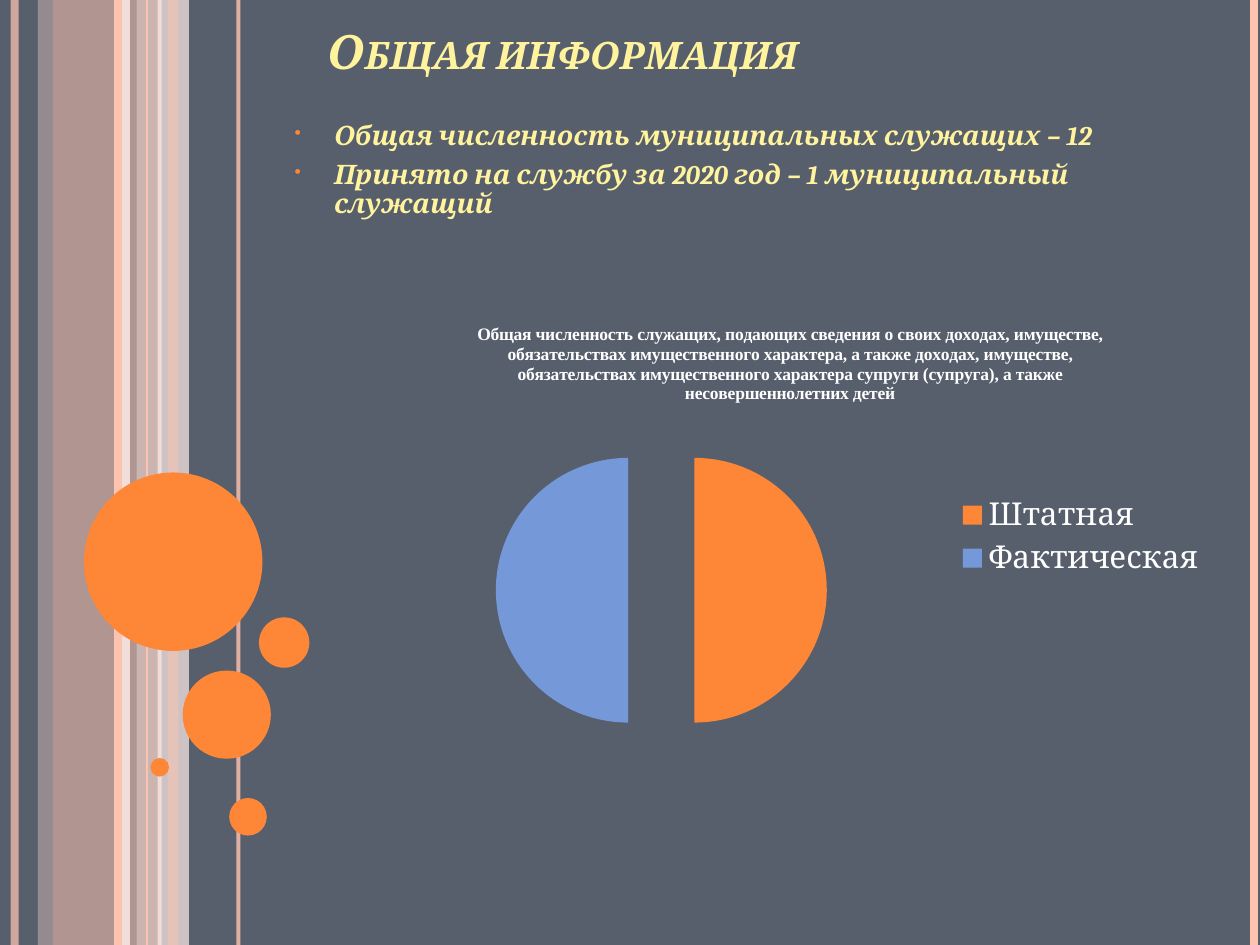
from lxml.etree import SubElement
from pptx import Presentation
from pptx.chart.data import CategoryChartData
from pptx.dml.color import RGBColor
from pptx.enum.chart import XL_CHART_TYPE, XL_LEGEND_POSITION
from pptx.enum.shapes import MSO_CONNECTOR, MSO_SHAPE
from pptx.enum.text import MSO_ANCHOR
from pptx.oxml.ns import qn
from pptx.util import Pt

TITLE = "Общая информация"
FACTS = [
    "Общая численность муниципальных служащих – 12",
    "Принято на службу за 2020 год – 1 муниципальный служащий",
]
CHART_TITLE = (
    "Общая численность служащих, подающих сведения о своих доходах, имуществе, "
    "обязательствах имущественного характера, а также доходах, имуществе, "
    "обязательствах имущественного характера супруги (супруга), а также "
    "несовершеннолетних детей"
)
STAFF = {"Штатная": 50, "Фактическая": 50}

THEME = {
    "background": "575F6D", "accent": "FE8637", "second": "7598D9",
    "peach": "FEC3AE", "light": "FFD9CE", "pale": "FFEDE8",
    "heading": "FFF39D", "chart_text": "FFFFFF",
    "font": "Cambria", "chart_title_font": "Times New Roman",
    "title_size": 27, "body_size": 15.3, "legend_size": 18, "chart_title_size": 10,
}
SLIDE_WIDTH, SLIDE_HEIGHT = 720, 540
BANDS = [
    (30, 48, "peach", 54), (21.6, 8.4, "light", 36), (78, 14.4, "light", 70),
    (90, 18, "pale", 71), (96, 6, "peach", 51),
]
STRIPES = [
    (8.4, 4.5, "peach", 73), (72, 4.5, "pale", 83), (67.2, 4.5, "peach", 100),
    (136.2, 2.25, "peach", 82), (84, 0.75, "peach", 100), (716.4, 4.5, "peach", 100),
]
CIRCLES = [
    (48, 270, 102), (104.4, 383.2, 50.4), (86, 433.2, 10.6),
    (131, 456, 21.5), (148, 352.8, 28.8),
]
TITLE_FRAME = (180, 20.9, 486, 28)
BODY_FRAME = (161.3, 66.2, 486, 57)
CHART_FRAME = (206.6, 173.5, 489.6, 266.4)
PLOT = {"x": 0.02, "y": 0.26, "w": 0.66, "h": 0.71}
EXPLOSION = 25
INDENT = 22.5


def points(values):
    return [Pt(value) for value in values]


def color(name):
    return RGBColor.from_string(THEME[name])


def apply(target, values):
    for name, value in values.items():
        setattr(target, name, value)


def paint(fill, name, opacity=100):
    fill.solid()
    fill.fore_color.rgb = color(name)
    if opacity < 100:
        srgb = fill._xPr.find(".//" + qn("a:srgbClr"))
        SubElement(srgb, qn("a:alpha"), val=str(opacity * 1000))


def add_filled(page, kind, frame, name, opacity=100):
    shape = page.shapes.add_shape(kind, *points(frame))
    shape.shadow.inherit = False
    paint(shape.fill, name, opacity)
    shape.line.fill.background()


def add_stripe(page, x, width, name, opacity):
    stripe = page.shapes.add_connector(
        MSO_CONNECTOR.STRAIGHT, *points((x, 0, x, SLIDE_HEIGHT)))
    stripe.line.width = Pt(width)
    paint(stripe.line.fill, name, opacity)
    SubElement(stripe._element.spPr, qn("a:effectLst"))


def add_text(page, frame, lines, size, anchor):
    box = page.shapes.add_textbox(*points(frame))
    text = box.text_frame
    apply(text, {"word_wrap": True, "vertical_anchor": anchor})
    for index, line in enumerate(lines):
        para = text.add_paragraph() if index else text.paragraphs[0]
        span = para.add_run()
        span.text = line
        apply(span.font, {"name": THEME["font"], "size": Pt(THEME[size]),
                          "bold": True, "italic": True})
        span.font.color.rgb = color("heading")
    return text.paragraphs


def add_bullet(para):
    apply(para, {"space_before": Pt(6), "line_spacing": 0.9})
    properties = para._p.get_or_add_pPr()
    properties.set("marL", str(Pt(INDENT)))
    properties.set("indent", str(-Pt(INDENT)))
    bullet_color = SubElement(properties, qn("a:buClr"))
    SubElement(bullet_color, qn("a:srgbClr"), val=THEME["accent"])
    SubElement(properties, qn("a:buSzPct"), val="70000")
    SubElement(properties, qn("a:buChar"), char="•")


def add_staff_chart(page):
    data = CategoryChartData()
    data.categories = list(STAFF)
    data.add_series(CHART_TITLE, list(STAFF.values()))
    chart = page.shapes.add_chart(
        XL_CHART_TYPE.PIE, *points(CHART_FRAME), data).chart
    apply(chart.font, {"name": THEME["font"], "size": Pt(THEME["legend_size"])})
    chart.font.color.rgb = color("chart_text")

    chart.has_title = True
    title = chart.chart_title.text_frame
    title.text = CHART_TITLE
    font = title.paragraphs[0].runs[0].font
    apply(font, {"name": THEME["chart_title_font"], "bold": True,
                 "size": Pt(THEME["chart_title_size"])})
    font.color.rgb = color("chart_text")

    chart.has_legend = True
    apply(chart.legend, {"position": XL_LEGEND_POSITION.RIGHT,
                         "include_in_layout": False})

    series = chart.plots[0].series[0]
    for index, name in enumerate(("accent", "second")):
        paint(series.points[index].format.fill, name)
    first_point = series._element.find(qn("c:dPt"))
    explosion = SubElement(series._element, qn("c:explosion"), val=str(EXPLOSION))
    first_point.addprevious(explosion)

    area = chart._chartSpace.chart.plotArea
    layout = area.find(qn("c:layout"))
    if layout is None:
        layout = SubElement(area, qn("c:layout"))
        area.insert(0, layout)
    manual = SubElement(layout, qn("c:manualLayout"))
    settings = {"layoutTarget": "inner", "xMode": "edge", "yMode": "edge", **PLOT}
    for name, value in settings.items():
        SubElement(manual, qn("c:" + name), val=str(value))


def main():
    deck = Presentation()
    apply(deck, {"slide_width": Pt(SLIDE_WIDTH), "slide_height": Pt(SLIDE_HEIGHT)})
    page = deck.slides.add_slide(deck.slide_layouts[6])
    paint(page.background.fill, "background")

    for x, width, name, opacity in BANDS:
        add_filled(page, MSO_SHAPE.RECTANGLE, (x, 0, width, SLIDE_HEIGHT), name, opacity)
    for stripe in STRIPES:
        add_stripe(page, *stripe)
    for x, y, size in CIRCLES:
        add_filled(page, MSO_SHAPE.OVAL, (x, y, size, size), "accent")

    heading = add_text(page, TITLE_FRAME, [TITLE], "title_size", MSO_ANCHOR.BOTTOM)
    heading[0].runs[0].font._element.set("cap", "small")
    for para in add_text(page, BODY_FRAME, FACTS, "body_size", MSO_ANCHOR.TOP):
        add_bullet(para)
    add_staff_chart(page)
    deck.save("out.pptx")


if __name__ == "__main__":
    main()
